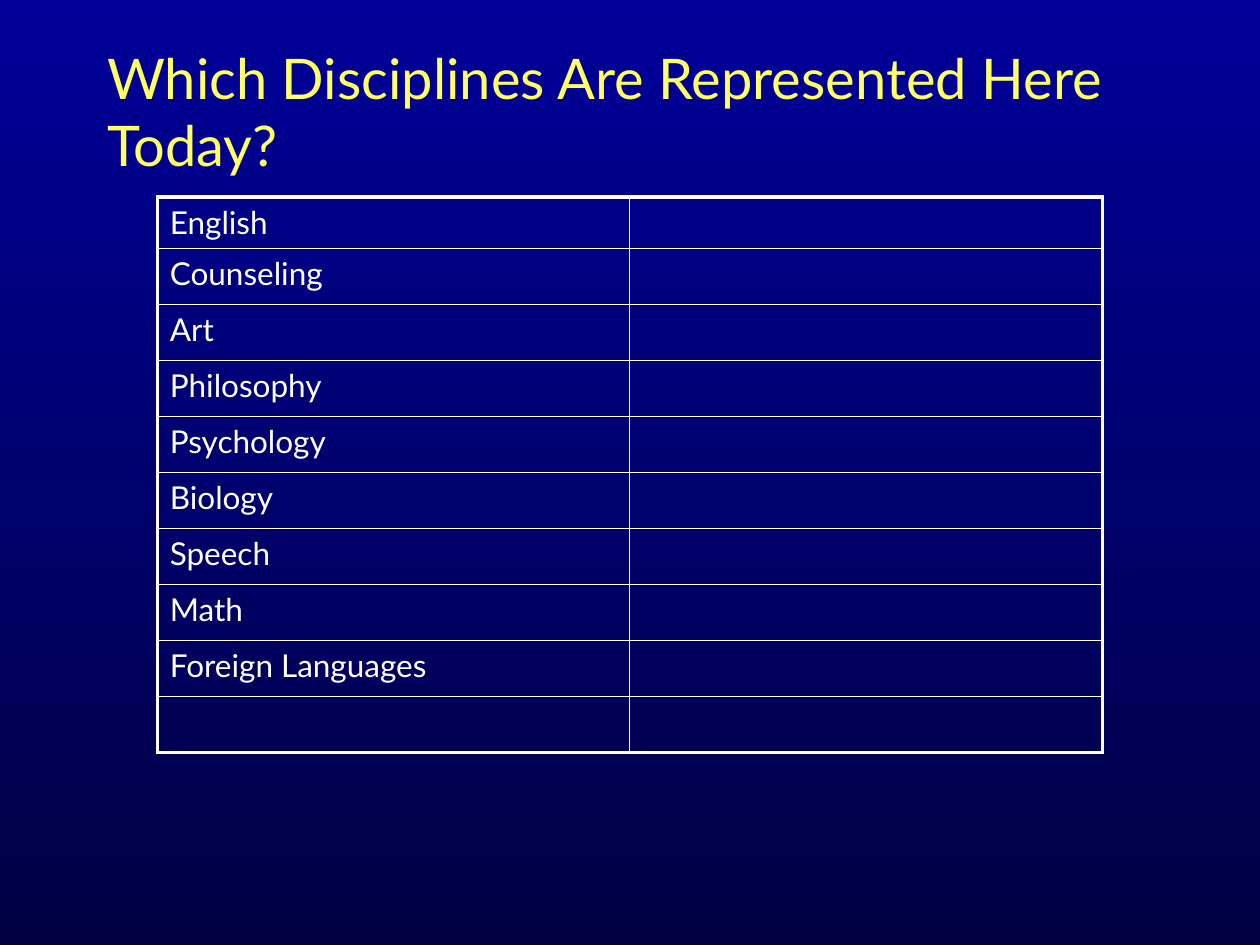
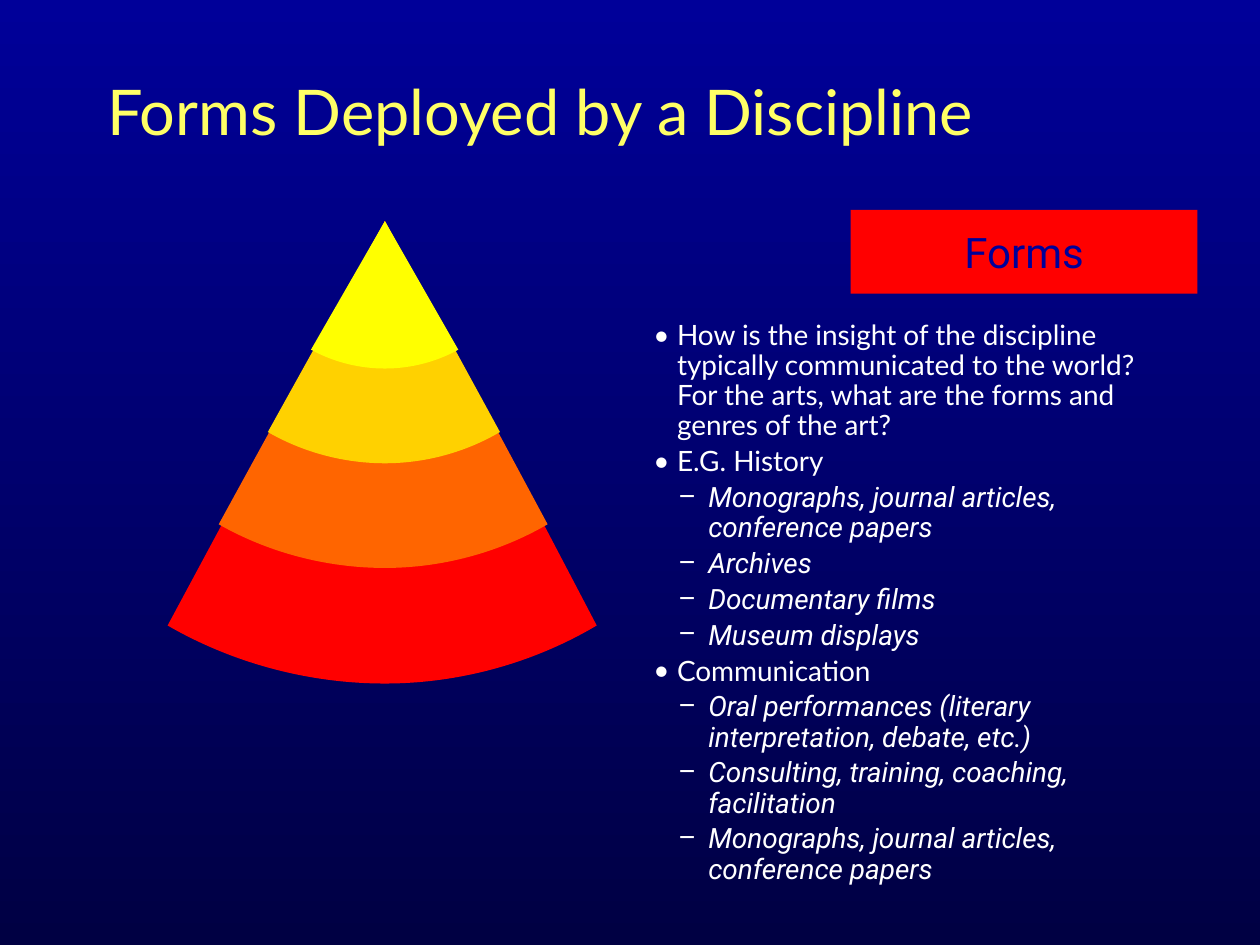
from lxml.etree import SubElement
from pptx import Presentation
from pptx.dml.color import RGBColor
from pptx.enum.shapes import MSO_SHAPE as Shape
from pptx.enum.text import MSO_ANCHOR as Anchor, PP_ALIGN as Align
from pptx.oxml import parse_xml
from pptx.oxml.ns import nsdecls, qn
from pptx.util import Cm, Pt

COLORS = {
    "top": "000099", "bottom": "000043", "title": "FFFF66", "text": "FFFFFF",
    "red": "FF0000", "orange": "FF6500", "gold": "FFD100", "yellow": "FFFF00",
}
HEAD_FONT, DETAIL_FONT = "Lato", "Roboto"

DISCIPLINES = ["English", "Counseling", "Art", "Philosophy", "Psychology",
               "Biology", "Speech", "Math", "Foreign Languages", ""]

# Level and text of each bullet
FORMS = [
    (0, "How is the insight of the discipline typically communicated to the "
        "world? For the arts, what are the forms and genres of the art?"),
    (0, "E.G. History"),
    (1, "Monographs, journal articles, conference papers"),
    (1, "Archives"),
    (1, "Documentary films"),
    (1, "Museum displays"),
    (0, "Communication"),
    (1, "Oral performances (literary interpretation, debate, etc.)"),
    (1, "Consulting, training, coaching, facilitation"),
    (1, "Monographs, journal articles, conference papers"),
]
# Bullet, left margin, hanging indent (cm), font and italic for each level
LEVELS = [("•", 0.48, 0.48, HEAD_FONT, False),
          ("–", 1.11, 0.61, DETAIL_FONT, True)]

# Colour, reach to left and right, depth at the corners and in the middle (cm)
WEDGES = [("red", 4.38, 4.27, 8.15, 9.32), ("orange", 3.35, 3.28, 6.11, 6.99),
          ("gold", 2.36, 2.32, 4.25, 4.88), ("yellow", 1.49, 1.48, 2.59, 2.97)]
APEX = (7.76, 4.46)


def rgb(name):
    return RGBColor.from_string(COLORS[name])


def add_run(p, text, size, color, font=HEAD_FONT, italic=False):
    r = p.add_run()
    r.text = text
    r.font.size, r.font.name, r.font.italic = Pt(size), font, italic
    r.font.color.rgb = rgb(color)


def paint(sp, color):
    sp.shadow.inherit = False
    sp.fill.solid()
    sp.fill.fore_color.rgb = rgb(color)
    sp.line.fill.background()


def add_text_box(s, left, top, width, height):
    tf = s.shapes.add_textbox(Cm(left), Cm(top), Cm(width), Cm(height)).text_frame
    tf.word_wrap = True
    return tf


def add_titled_slide(prs, title, size):
    s = prs.slides.add_slide(prs.slide_layouts[6])
    # Shared background gradient, running downwards
    fill = s.background.fill
    fill.gradient()
    fill.gradient_angle = 270
    for stop, name in zip(fill.gradient_stops, ("top", "bottom")):
        stop.color.rgb = rgb(name)
    # Shared title position
    tf = add_text_box(s, 1.91, 0.64, 21.59, 3.18)
    tf.vertical_anchor = Anchor.MIDDLE
    add_run(tf.paragraphs[0], title, size, "title")
    return s


def set_borders(cell, widths):
    cell.fill.background()
    tc_pr = cell._tc.get_or_add_tcPr()
    for i, (side, width) in enumerate(zip("LRTB", widths)):
        tc_pr.insert(i, parse_xml(
            f'<a:ln{side} {nsdecls("a")} w="{Pt(width)}"><a:solidFill>'
            f'<a:srgbClr val="{COLORS["text"]}"/></a:solidFill></a:ln{side}>'))


def add_tally_table(s, names, n_cols=2):
    n_rows = len(names)
    table = s.shapes.add_table(n_rows, n_cols, Cm(3.17), Cm(3.97),
                               Cm(19.05), Cm(11.21)).table
    table.first_row = table.horz_banding = False
    for i, name in enumerate(names):
        table.rows[i].height = Cm(1.13 if i else 1.04)
        if name:
            add_run(table.cell(i, 0).text_frame.paragraphs[0], name, 18, "text")
        for j in range(n_cols):
            # Thick outside, thin inside
            outer = (j == 0, j == n_cols - 1, i == 0, i == n_rows - 1)
            set_borders(table.cell(i, j), [2.25 if o else 1 for o in outer])


def curve_to(segment, points):
    """Turn a straight outline segment into a cubic curve."""
    curve = parse_xml(f'<a:cubicBezTo {nsdecls("a")}/>')
    for x, y in points:
        SubElement(curve, qn("a:pt"), x=str(Cm(x)), y=str(Cm(y)))
    segment.getparent().replace(segment, curve)


def add_wedge(s, color, left, right, corner, depth):
    x0, y0 = APEX
    builder = s.shapes.build_freeform(Cm(x0 + right), Cm(y0 + corner))
    builder.add_line_segments([(Cm(x0), Cm(y0 + depth)),
                               (Cm(x0 - left), Cm(y0 + corner)),
                               (Cm(x0), Cm(y0))], close=True)
    sp = builder.convert_to_shape()
    paint(sp, color)
    # Round the lower edge, in lengths from the shape's top left
    to_middle, to_left, _ = list(sp._element.iter(qn("a:lnTo")))
    shoulder = corner + 0.65 * (depth - corner)
    curve_to(to_middle, [(left + 0.7 * right, shoulder),
                         (left + 0.35 * right, depth), (left, depth)])
    curve_to(to_left, [(0.65 * left, depth), (0.3 * left, shoulder), (0, corner)])


def add_label(s, text):
    sp = s.shapes.add_shape(Shape.RECTANGLE, Cm(17.15), Cm(4.23), Cm(6.99), Cm(1.69))
    paint(sp, "red")
    tf = sp.text_frame
    tf.word_wrap = False
    tf.vertical_anchor = Anchor.MIDDLE
    p = tf.paragraphs[0]
    p.alignment = Align.CENTER
    add_run(p, text, 24, "top", DETAIL_FONT)


def add_bullets(s, items):
    tf = add_text_box(s, 12.92, 6.35, 10.58, 12.07)
    for i, (level, text) in enumerate(items):
        p = tf.add_paragraph() if i else tf.paragraphs[0]
        char, margin, hang, font, italic = LEVELS[level]
        p.level, p.line_spacing, p.space_before = level, 0.9, Pt(3.2)
        p_pr = p._p.get_or_add_pPr()
        p_pr.set("marL", str(Cm(margin)))
        p_pr.set("indent", str(-Cm(hang)))
        SubElement(p_pr, qn("a:buFont"), typeface=font)
        SubElement(p_pr, qn("a:buChar"), char=char)
        add_run(p, text, 16, "text", font, italic)


def main():
    prs = Presentation()
    prs.slide_width, prs.slide_height = Cm(25.4), Cm(19.05)

    # Slide 1: disciplines in the room
    s = add_titled_slide(prs, "Which Disciplines Are Represented Here Today?", 32)
    add_tally_table(s, DISCIPLINES)

    # Slide 2: forms of a discipline
    s = add_titled_slide(prs, "Forms Deployed by a Discipline", 36)
    add_bullets(s, FORMS)
    add_label(s, "Forms")
    for wedge in WEDGES:
        add_wedge(s, *wedge)

    prs.save("out.pptx")


if __name__ == "__main__":
    main()
